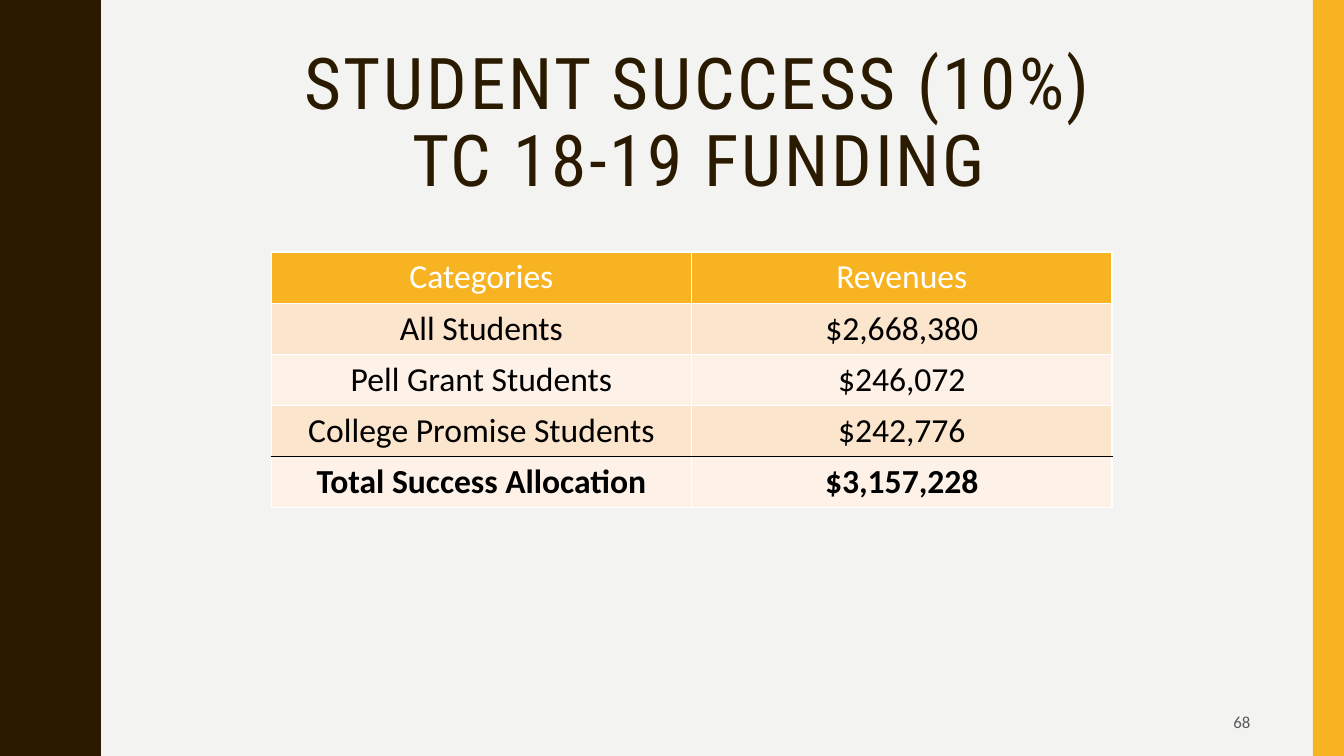
from pptx import Presentation, util as u
from pptx.dml.color import RGBColor
from pptx.enum import shapes, text
from pptx.oxml import parse_xml
from pptx.oxml.ns import nsdecls

TITLE = "STUDENT SUCCESS (10%)\vTC 18-19 FUNDING"
ROWS = [
    ("Categories", "Revenues"),
    ("All Students", "$2,668,380"),
    ("Pell Grant Students", "$246,072"),
    ("College Promise Students", "$242,776"),
    ("Total Success Allocation", "$3,157,228"),
]
NUMBER = "68"
HEX = {
    "back": "F3F3F2", "dark": "2A1A00", "gold": "F8B323",
    "peach": "FCE5CD", "pale": "FEF2E8", "white": "FFFFFF",
    "black": "000000", "gray": "595959",
}
HALF = [
    (0.78, 0), (0.78, 0.07), (0.79, 0.14), (0.8, 0.2), (0.81, 0.25),
    (0.83, 0.29), (0.85, 0.33), (0.87, 0.38), (0.89, 0.42), (0.91, 0.46),
    (0.93, 0.5), (0.95, 0.55), (0.96, 0.61), (0.97, 0.68),
]
WAVES, STEP = 5, 0.75
ROW, COL = 0.5, 4.17


def tint(name):
    return RGBColor.from_string(HEX[name])


def paint(shape, name):
    shape.fill.solid()
    shape.fill.fore_color.rgb = tint(name)
    shape.line.fill.background()
    shape.shadow.inherit = False


def style(para, face, size, name, align, bold=False):
    para.alignment = align
    for run in para.runs:
        font = run.font
        font.name, font.size, font.bold = face, u.Pt(size), bold
        font.color.rgb = tint(name)


def edge(cell, side, name, rank):
    cell._tc.get_or_add_tcPr().insert(rank, parse_xml(
        f'<a:{side} {nsdecls("a")} w="12700"><a:solidFill>'
        f'<a:srgbClr val="{HEX[name]}"/></a:solidFill></a:{side}>'))


deck = Presentation()
deck.slide_width, deck.slide_height = u.Inches(13.33), u.Inches(7.5)
slide = deck.slides.add_slide(deck.slide_layouts[5])
slide.background.fill.solid()
slide.background.fill.fore_color.rgb = tint("back")

points = [(0, 0)]
for wave in range(WAVES):
    top = wave * 2 * STEP
    points += [(x, top + y) for x, y in HALF]
    points += [(1.75 - x, top + STEP + y) for x, y in HALF]
points += [(0.78, 7.5), (0, 7.5)]
pen = slide.shapes.build_freeform(0, 0, scale=u.Inches(1))
pen.add_line_segments(points[1:], close=True)
paint(pen.convert_to_shape(), "dark")

bar = slide.shapes.add_shape(
    shapes.MSO_SHAPE.RECTANGLE, u.Inches(13.02), 0, u.Inches(0.31), u.Inches(7.5))
paint(bar, "gold")

title = slide.shapes.title
title.left, title.top = u.Inches(1.37), u.Inches(0.42)
title.width, title.height = u.Inches(11.13), u.Inches(1.63)
frame = title.text_frame
frame.text = TITLE
frame.word_wrap = True
frame.auto_size = text.MSO_AUTO_SIZE.NONE
frame.vertical_anchor = text.MSO_ANCHOR.MIDDLE
head = frame.paragraphs[0]
head.line_spacing = 0.9
style(head, "Roboto Condensed", 51, "dark", text.PP_ALIGN.CENTER)
for run in head.runs:
    run.font._element.set("spc", "200")

grid = slide.shapes.add_table(
    len(ROWS), 2, u.Inches(2.69), u.Inches(2.5),
    u.Inches(2 * COL), u.Inches(len(ROWS) * ROW)).table
last = len(ROWS) - 1
for r, row in enumerate(ROWS):
    grid.rows[r].height = u.Inches(ROW)
    fill = "gold" if r == 0 else "peach" if r % 2 else "pale"
    for c, word in enumerate(row):
        cell = grid.cell(r, c)
        cell.text = word
        cell.fill.solid()
        cell.fill.fore_color.rgb = tint(fill)
        style(cell.text_frame.paragraphs[0], "Calibri", 24,
              "black" if r else "white", text.PP_ALIGN.CENTER, r == last)
        sides = {
            "lnL": "white", "lnR": "white",
            "lnT": "black" if r == last else "white",
            "lnB": "black" if r == last - 1 else "white",
        }
        for rank, (side, name) in enumerate(sides.items()):
            edge(cell, side, name, rank)

box = slide.shapes.add_textbox(
    u.Inches(9.42), u.Inches(6.97), u.Inches(3.08), u.Inches(0.38))
frame = box.text_frame
frame.text = NUMBER
frame.word_wrap = True
frame.vertical_anchor = text.MSO_ANCHOR.MIDDLE
style(frame.paragraphs[0], "Calibri", 12, "gray", text.PP_ALIGN.RIGHT)

deck.save("out.pptx")
